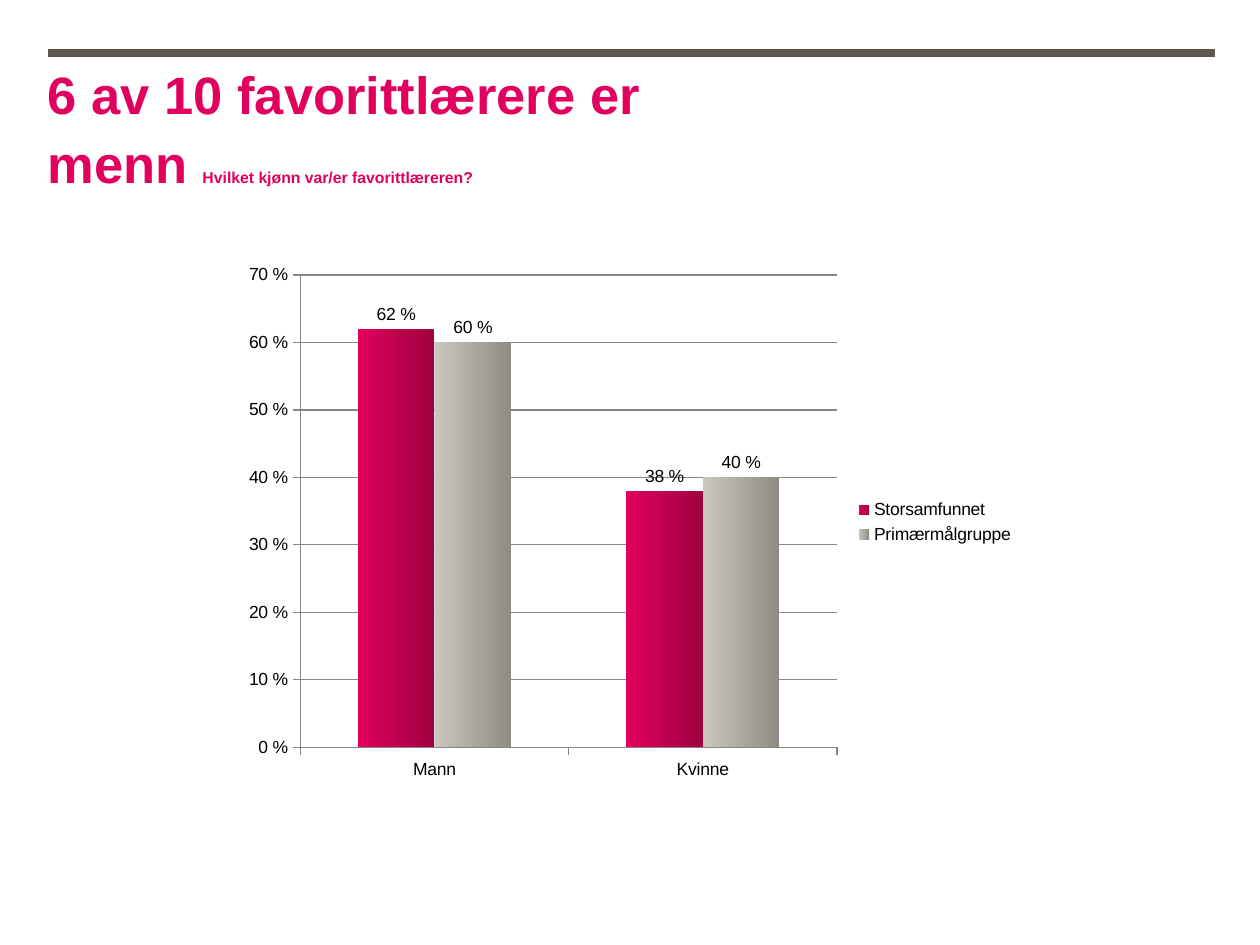
from pptx import Presentation
from pptx.chart.data import CategoryChartData
from pptx.dml.color import RGBColor
from pptx.enum.chart import XL_CHART_TYPE, XL_LABEL_POSITION, XL_LEGEND_POSITION, XL_TICK_MARK
from pptx.enum.shapes import MSO_CONNECTOR
from pptx.enum.text import MSO_ANCHOR, MSO_AUTO_SIZE, PP_ALIGN
from pptx.oxml.ns import qn
from pptx.util import Inches, Pt
from lxml import etree

COLUMNS = XL_CHART_TYPE.COLUMN_CLUSTERED
OUTSIDE_END = XL_LABEL_POSITION.OUTSIDE_END
LEGEND_RIGHT = XL_LEGEND_POSITION.RIGHT
TICK_OUTSIDE = XL_TICK_MARK.OUTSIDE
STRAIGHT = MSO_CONNECTOR.STRAIGHT
BOTTOM = MSO_ANCHOR.BOTTOM
NO_AUTOFIT = MSO_AUTO_SIZE.NONE
LEFT = PP_ALIGN.LEFT

PINK = RGBColor(0xE1, 0x00, 0x5D)
DARK_PINK = RGBColor(0x9E, 0x00, 0x41)
SAND = RGBColor(0xCB, 0xC7, 0xBF)
DARK_SAND = RGBColor(0x8F, 0x8C, 0x84)
BROWN = RGBColor(0x5F, 0x57, 0x4F)
GRAY = RGBColor(0x86, 0x86, 0x86)
BLACK = RGBColor(0x00, 0x00, 0x00)
FONT = "Arial"
PERCENT = r"0\ %"

presentation = Presentation()
presentation.slide_width = Inches(10)
presentation.slide_height = Inches(7.5)
slide = presentation.slides.add_slide(presentation.slide_layouts[5])

# Rule across the top
rule = slide.shapes.add_connector(STRAIGHT, Inches(0.38), Inches(0.42), Inches(9.64), Inches(0.42))
rule.line.color.rgb = BROWN
rule.line.width = Pt(4.5)
etree.SubElement(rule._element.spPr, qn("a:effectLst"))

# Title with the survey question in small type
title = slide.shapes.title
title.left, title.top = Inches(0.38), Inches(0.43)
title.width, title.height = Inches(5.88), Inches(1.11)
frame = title.text_frame
frame.margin_left = frame.margin_top = frame.margin_right = frame.margin_bottom = 0
frame.word_wrap = True
frame.auto_size = NO_AUTOFIT
frame.vertical_anchor = BOTTOM
paragraph = frame.paragraphs[0]
paragraph.alignment = LEFT
paragraph.line_spacing = 1.1
paragraph.font.name = FONT
paragraph.font.bold = True
paragraph.font.color.rgb = PINK
for text, size in (
    ("6 av 10 favorittlærere er menn ", 30),
    ("Hvilket kjønn var/er favorittlæreren?", 9),
):
    run = paragraph.add_run()
    run.text = text
    run.font.size = Pt(size)

# Column chart of gender by group
chart_data = CategoryChartData(number_format=PERCENT)
chart_data.categories = ["Mann", "Kvinne"]
chart_data.add_series("Storsamfunnet", (0.62, 0.38))
chart_data.add_series("Primærmålgruppe", (0.60, 0.40))
chart = slide.shapes.add_chart(
    COLUMNS, Inches(1.85), Inches(2.02), Inches(6.3), Inches(4.25), chart_data
).chart
chart.has_title = False
chart.font.name = FONT
chart.font.size = Pt(10)
chart.font.color.rgb = BLACK
chart.has_legend = True
chart.legend.position = LEGEND_RIGHT
chart.legend.include_in_layout = False

# Axes and gridlines
value_axis = chart.value_axis
value_axis.minimum_scale = 0
value_axis.maximum_scale = 0.7
value_axis.major_unit = 0.1
value_axis.tick_labels.number_format = PERCENT
value_axis.tick_labels.number_format_is_linked = False
value_axis.has_major_gridlines = True
for axis in (chart.category_axis, value_axis):
    axis.major_tick_mark = TICK_OUTSIDE
    axis.format.line.color.rgb = GRAY
value_axis.major_gridlines.format.line.color.rgb = GRAY

# Gradient columns with value labels
plot = chart.plots[0]
plot.vary_by_categories = False
plot.gap_width = 150
plot.overlap = 0
gradients = ((PINK, DARK_PINK), (SAND, DARK_SAND))
for series, colors in zip(plot.series, gradients):
    fill = series.format.fill
    fill.gradient()
    fill.gradient_angle = 0
    for stop, color, position in zip(fill.gradient_stops, colors, (0, 1)):
        stop.color.rgb = color
        stop.position = position
    labels = series.data_labels
    labels.show_value = True
    labels.number_format = PERCENT
    labels.number_format_is_linked = False
    labels.position = OUTSIDE_END

presentation.save("out.pptx")
